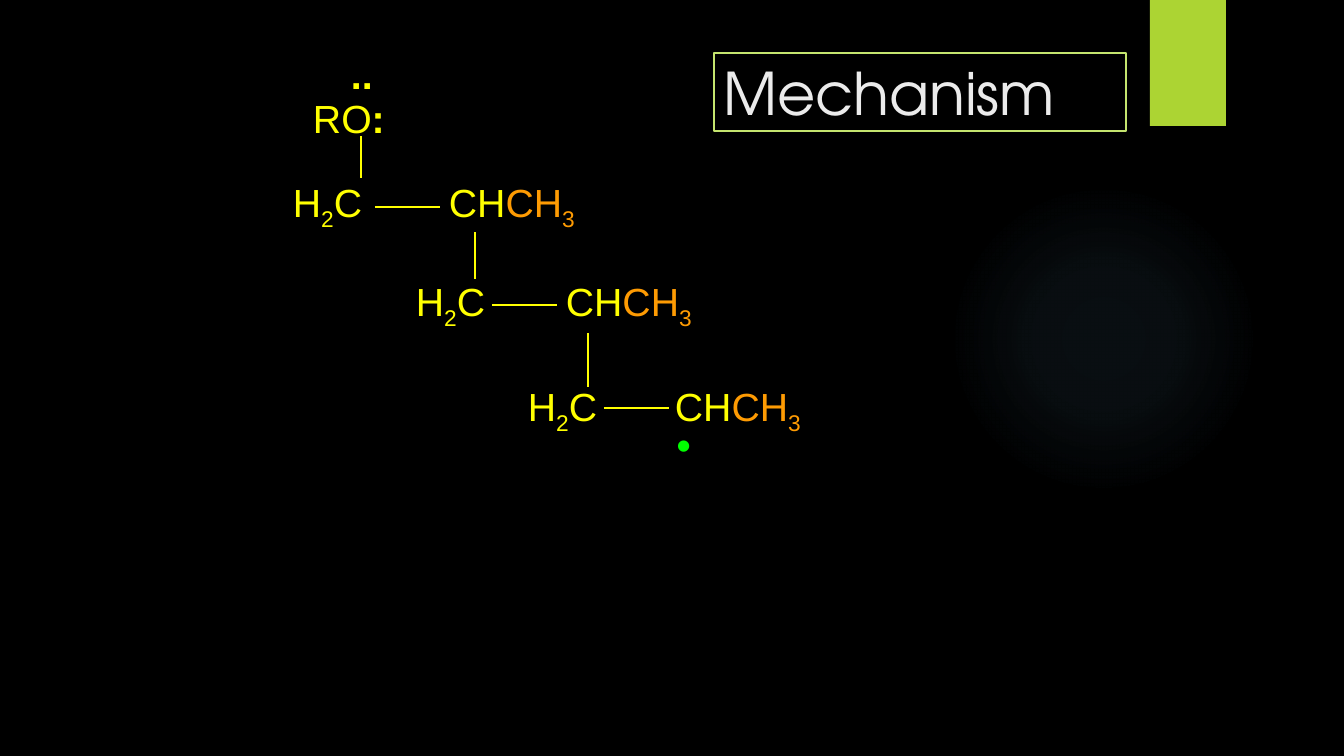
from dataclasses import dataclass

from lxml.etree import SubElement
from pptx import Presentation
from pptx.dml.color import RGBColor
from pptx.enum.shapes import MSO_CONNECTOR, MSO_SHAPE
from pptx.enum.text import MSO_ANCHOR, MSO_AUTO_SIZE, PP_ALIGN
from pptx.oxml import parse_xml
from pptx.oxml.ns import nsdecls, qn
from pptx.util import Emu, Pt

SCALE = 914400 / 100.8  # EMU per px


def px(n: int) -> Emu:
    return Emu(round(n * SCALE))


@dataclass(frozen=True)
class Theme:
    background: str = "000000"
    glow: str = "7AC4F0"
    tab: str = "ACD433"
    title: str = "EBEBEB"
    title_border: str = "C4E46E"
    chain: str = "FFFF00"
    methyl: str = "FE9B03"
    radical: str = "00FF00"
    title_font: str = "TeX Gyre Adventor"
    formula_font: str = "Arial"
    title_size: int = 42
    formula_size: int = 28
    line_width: int = 2


THEME = Theme()


@dataclass(frozen=True)
class Piece:
    text: str
    color: str = THEME.chain
    bold: bool = False
    subscript: bool = False


@dataclass(frozen=True)
class Label:
    x: int
    y: int
    pieces: tuple[Piece, ...]
    width: int = 132
    height: int = 66
    spacing: int = 35


@dataclass(frozen=True)
class Bond:
    x1: int
    y1: int
    x2: int
    y2: int


@dataclass(frozen=True)
class Unit:
    """One repeat unit of the chain: H2C, its bond and CHCH3."""
    y: int
    ch2_x: int
    ch_x: int
    bond_x: int
    bond_y: int


CH2 = (Piece("H"), Piece("2", subscript=True), Piece("C"))
CHCH3 = (Piece("CH"), Piece("CH", THEME.methyl),
         Piece("3", THEME.methyl, subscript=True))
BOND_LENGTH = 65

UNITS = (
    Unit(180, 291, 447, 375, 207),
    Unit(279, 414, 564, 492, 305),
    Unit(384, 526, 673, 604, 408),
)
VERTICAL_BONDS = (
    Bond(361, 178, 361, 136),
    Bond(475, 279, 475, 232),
    Bond(588, 333, 588, 387),
)
ALKOXY = (
    Label(349, 45, (Piece("..", bold=True),), width=81),
    Label(311, 89, (Piece("RO"), Piece(":", bold=True)), width=124),
)
RADICAL = Label(675, 434, (Piece("•", THEME.radical, bold=True),),
                width=82, height=48, spacing=22)


def rgb(color: str) -> RGBColor:
    return RGBColor.from_string(color)


def set_insets(tf, side: int, end: int) -> None:
    tf.margin_left = tf.margin_right = px(side)
    tf.margin_top = tf.margin_bottom = px(end)


def add_label(shapes, label: Label) -> None:
    box = shapes.add_textbox(px(label.x), px(label.y),
                             px(label.width), px(label.height))
    tf = box.text_frame
    tf.word_wrap = True
    set_insets(tf, 2, 3)
    p = tf.paragraphs[0]
    p.line_spacing = Pt(label.spacing)
    for piece in label.pieces:
        r = p.add_run()
        r.text = piece.text
        r.font.name = THEME.formula_font
        r.font.size = Pt(THEME.formula_size)
        r.font.bold = piece.bold
        r.font.color.rgb = rgb(piece.color)
        if piece.subscript:
            r.font._element.set("baseline", "-25000")


def add_bond(shapes, bond: Bond) -> None:
    line = shapes.add_connector(MSO_CONNECTOR.STRAIGHT, px(bond.x1), px(bond.y1),
                                px(bond.x2), px(bond.y2))
    line.line.color.rgb = rgb(THEME.chain)
    line.line.width = Pt(THEME.line_width)
    SubElement(line._element.spPr, qn("a:effectLst"))


def add_glow(shapes) -> None:
    glow = shapes.add_shape(MSO_SHAPE.OVAL, px(949), px(184), px(310), px(310))
    glow.shadow.inherit = False
    glow.line.fill.background()
    glow.fill.background()
    stops = "".join(
        f'<a:gs pos="{pos}000"><a:srgbClr val="{THEME.glow}">'
        f'<a:alpha val="{alpha}000"/></a:srgbClr></a:gs>'
        for pos, alpha in ((0, 7), (36, 6), (69, 0)))
    gradient = parse_xml(
        f'<a:gradFill {nsdecls("a")} rotWithShape="1"><a:gsLst>{stops}</a:gsLst>'
        '<a:path path="circle"><a:fillToRect l="50000" t="50000" r="50000" b="50000"/>'
        '</a:path></a:gradFill>')
    sp_pr = glow._element.spPr
    sp_pr.replace(sp_pr.find(qn("a:noFill")), gradient)


def add_corner_tab(shapes) -> None:
    tab = shapes.add_shape(MSO_SHAPE.RECTANGLE, px(1150), px(0), px(76), px(126))
    tab.fill.solid()
    tab.fill.fore_color.rgb = rgb(THEME.tab)
    tab.line.fill.background()
    tab.shadow.inherit = False
    effects = tab._element.spPr.find(qn("a:effectLst"))
    effects.append(parse_xml(
        f'<a:outerShdw {nsdecls("a")} blurRad="{Pt(3)}" dist="{Pt(2)}" dir="5400000" '
        'rotWithShape="0"><a:srgbClr val="000000"><a:alpha val="45000"/>'
        '</a:srgbClr></a:outerShdw>'))


def format_title(title) -> None:
    title.left, title.top, title.width, title.height = map(px, (714, 53, 412, 78))
    title.line.color.rgb = rgb(THEME.title_border)
    title.line.width = Pt(THEME.line_width)
    tf = title.text_frame
    tf.auto_size = MSO_AUTO_SIZE.NONE
    tf.vertical_anchor = MSO_ANCHOR.MIDDLE
    set_insets(tf, 9, 5)
    p = tf.paragraphs[0]
    p.alignment = PP_ALIGN.LEFT
    r = p.add_run()
    r.text = "Mechanism"
    r.font.name = THEME.title_font
    r.font.size = Pt(THEME.title_size)
    r.font.color.rgb = rgb(THEME.title)


def main() -> None:
    prs = Presentation()
    prs.slide_width, prs.slide_height = px(1344), px(756)
    s = prs.slides.add_slide(prs.slide_layouts[5])
    s.background.fill.solid()
    s.background.fill.fore_color.rgb = rgb(THEME.background)

    # Backdrop and title
    add_glow(s.shapes)
    add_corner_tab(s.shapes)
    format_title(s.shapes.title)

    # Polymer chain
    for unit in UNITS:
        add_label(s.shapes, Label(unit.ch2_x, unit.y, CH2))
        add_label(s.shapes, Label(unit.ch_x, unit.y, CHCH3))
        add_bond(s.shapes, Bond(unit.bond_x, unit.bond_y,
                                unit.bond_x + BOND_LENGTH, unit.bond_y))
    for bond in VERTICAL_BONDS:
        add_bond(s.shapes, bond)

    # Chain ends: alkoxy group with lone pairs, and the radical
    alkoxy = s.shapes.add_group_shape()
    for label in ALKOXY:
        add_label(alkoxy.shapes, label)
    add_label(s.shapes, RADICAL)

    prs.save("out.pptx")


if __name__ == "__main__":
    main()
